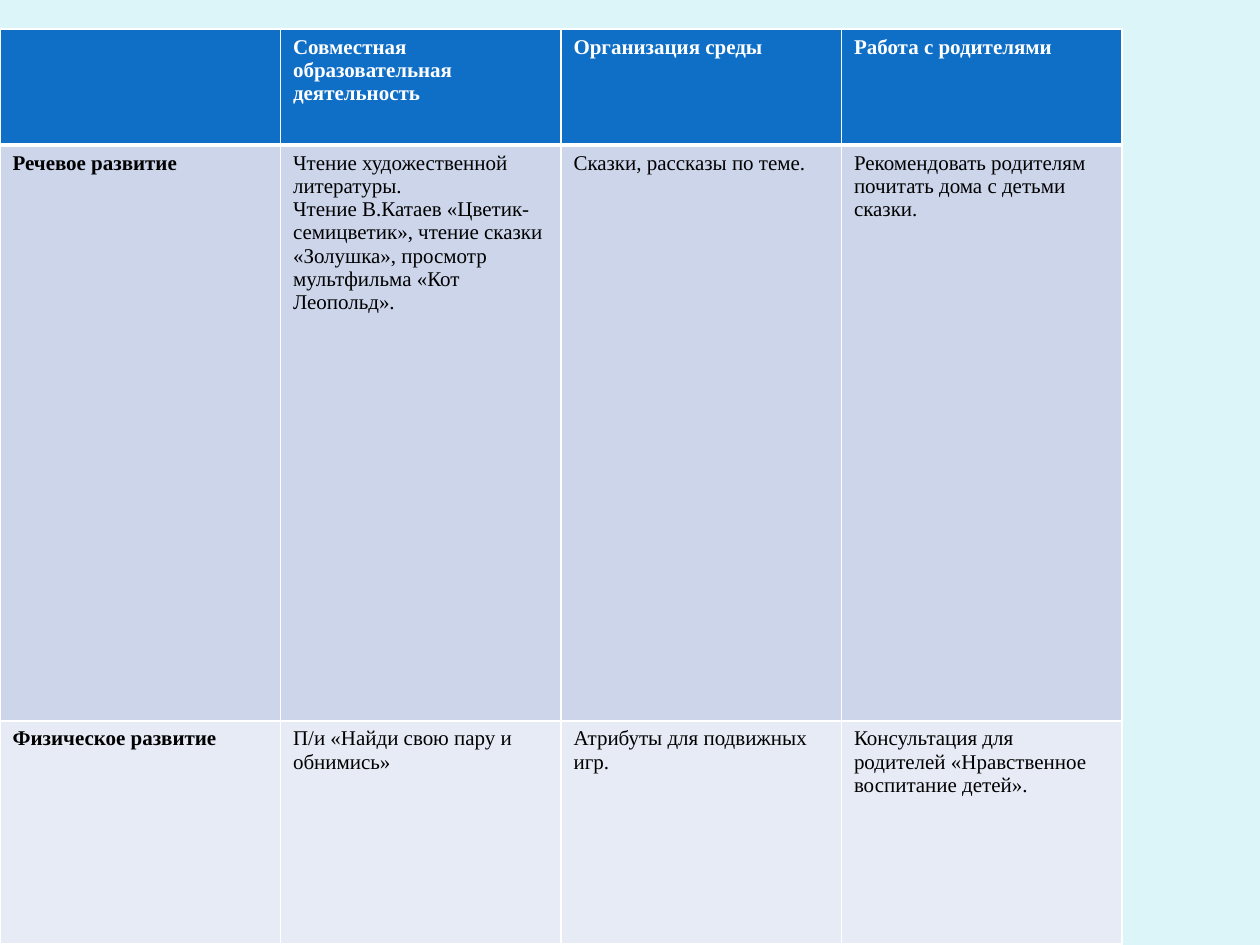
from lxml.etree import SubElement
from pptx import Presentation
from pptx.dml.color import RGBColor
from pptx.oxml.ns import qn
from pptx.util import Emu, Pt

EMU_PER_PX = 914400 / 126
BLANK_LAYOUT = 6


def px(length):
    return Emu(round(length * EMU_PER_PX))


def color(hex_string):
    return RGBColor.from_string(hex_string)


def write(frame, text, *, font, size, ink, bold=False):
    frame.text = text
    for paragraph in frame.paragraphs:
        paragraph.font.name = font
        paragraph.font.size = Pt(size)
        paragraph.font.bold = bold
        paragraph.font.color.rgb = color(ink)


class PlanSlide:
    font = "Times New Roman"
    size = 12
    background = "DBF5F9"
    rule = "FFFFFF"
    header_fill = "0F6FC6"
    header_ink = "FFFFFF"
    body_ink = "000000"
    bands = ("CCD5EA", "E7EBF5")

    def __init__(self, deck):
        self.slide = deck.slides.add_slide(deck.slide_layouts[BLANK_LAYOUT])
        fill = self.slide.background.fill
        fill.solid()
        fill.fore_color.rgb = color(self.background)

    def border(self, cell, side, points):
        line = SubElement(cell._tc.get_or_add_tcPr(), qn(f"a:{side}"), w=str(Pt(points)))
        SubElement(SubElement(line, qn("a:solidFill")), qn("a:srgbClr"), val=self.rule)

    def cell(self, cell, text, row, column):
        header = row == 0
        widths = {"lnL": 1, "lnR": 1, "lnT": 3 if row == 1 else 1, "lnB": 3 if header else 1}
        for side, points in widths.items():
            self.border(cell, side, points)
        cell.fill.solid()
        cell.fill.fore_color.rgb = color(
            self.header_fill if header else self.bands[(row - 1) % len(self.bands)]
        )
        write(
            cell.text_frame,
            text,
            font=self.font,
            size=self.size,
            ink=self.header_ink if header else self.body_ink,
            bold=header or column == 0,
        )

    def table(self, content, left, top, width, heights):
        columns = len(content[0])
        plan = self.slide.shapes.add_table(
            len(content), columns, px(left), px(top), px(width), px(sum(heights))
        ).table
        for column in plan.columns:
            column.width = px(width / columns)
        for row, height in zip(plan.rows, heights):
            row.height = px(height)
        for row, texts in enumerate(content):
            for column, text in enumerate(texts):
                self.cell(plan.cell(row, column), text, row, column)


def main():
    deck = Presentation()
    deck.slide_width = px(1260)
    deck.slide_height = px(945)
    activities = [
        (
            "",
            "Совместная образовательная деятельность",
            "Организация среды",
            "Работа с родителями",
        ),
        (
            "Речевое развитие",
            "Чтение художественной литературы.\n"
            "Чтение В.Катаев «Цветик-семицветик», чтение сказки «Золушка», "
            "просмотр мультфильма «Кот Леопольд».",
            "Сказки, рассказы по теме.",
            "Рекомендовать родителям почитать дома с детьми сказки.",
        ),
        (
            "Физическое развитие",
            "П/и «Найди свою пару и обнимись»",
            "Атрибуты для подвижных игр.",
            "Консультация для родителей «Нравственное воспитание детей».",
        ),
    ]
    PlanSlide(deck).table(activities, left=0, top=29, width=1122, heights=(116, 576, 223))
    deck.save("out.pptx")


if __name__ == "__main__":
    main()
